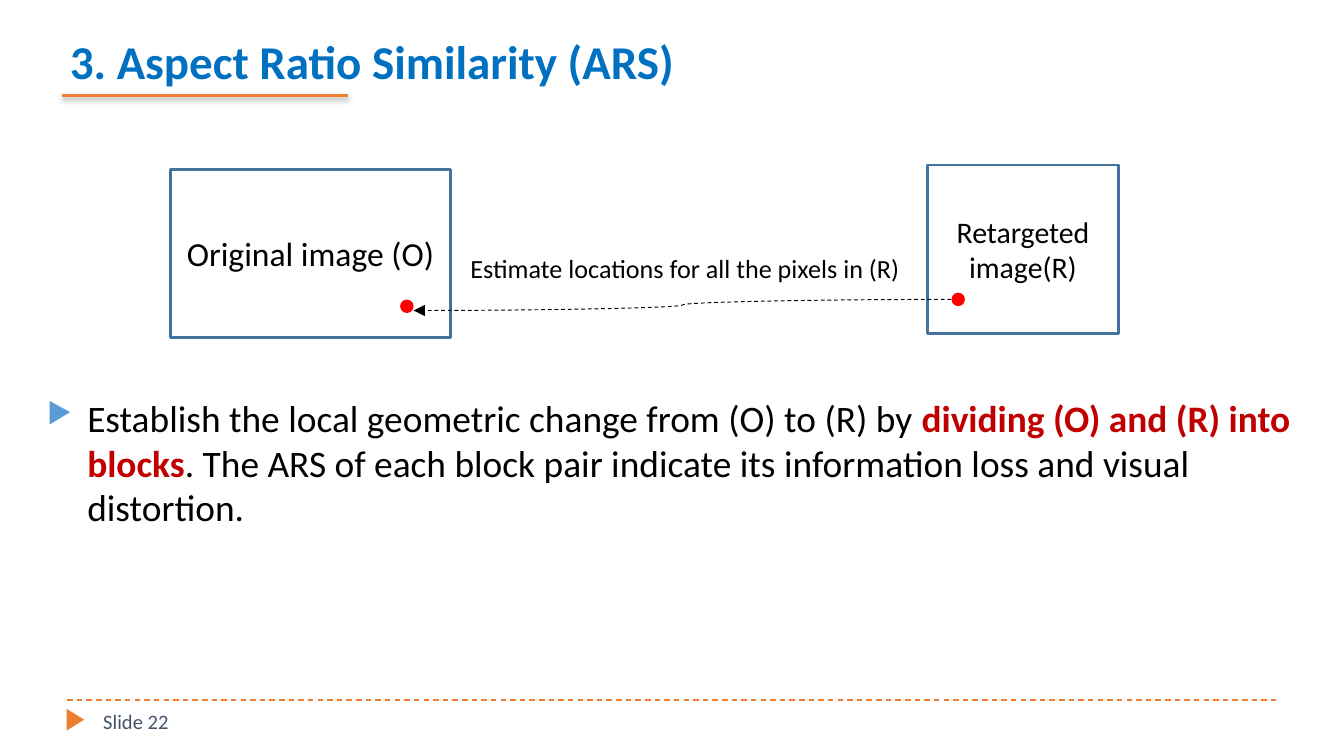
from lxml.etree import SubElement
from pptx import Presentation
from pptx.dml.color import RGBColor
from pptx.enum.dml import MSO_LINE_DASH_STYLE as Dash
from pptx.enum.shapes import MSO_CONNECTOR as Connector, MSO_SHAPE as Shape
from pptx.enum.text import MSO_ANCHOR as Anchor, PP_ALIGN as Align
from pptx.oxml.ns import qn
from pptx.util import Cm, Pt

WHITE = RGBColor(0xFF, 0xFF, 0xFF)
BLACK = RGBColor(0x00, 0x00, 0x00)
ORANGE = RGBColor(0xED, 0x7D, 0x31)
TITLE_BLUE = RGBColor(0x00, 0x70, 0xC0)
BORDER_BLUE = RGBColor(0x43, 0x73, 0x9E)
BULLET_BLUE = RGBColor(0x5B, 0x9B, 0xD5)
SLATE = RGBColor(0x44, 0x54, 0x6A)
DARK_RED = RGBColor(0xC0, 0x00, 0x00)
RED = RGBColor(0xFF, 0x00, 0x00)


def add_xml(parent, tag, **attributes):
    return SubElement(parent, qn(tag), {key: str(value) for key, value in attributes.items()})


class SlideBuilder:
    font_name = "Calibri"

    def __init__(self, slide):
        self.slide = slide

    def add_run(self, paragraph, text, size, color=BLACK, bold=False):
        run = paragraph.add_run()
        run.text = text
        run.font.color.rgb = color
        formats = {"name": self.font_name, "size": Pt(size), "bold": bold}
        for name, value in formats.items():
            setattr(run.font, name, value)

    def text(self, box, runs, size, wrap=True, anchor=Anchor.TOP):
        """Add a text box of (text, format) runs and return its paragraph."""
        frame = self.slide.shapes.add_textbox(*map(Cm, box)).text_frame
        frame.word_wrap = wrap
        frame.vertical_anchor = anchor
        paragraph = frame.paragraphs[0]
        for text, formats in runs:
            self.add_run(paragraph, text, size, **formats)
        return paragraph

    def bullet(self, box, runs, size):
        paragraph = self.text(box, runs, size)
        paragraph.space_before = Pt(6)
        properties = paragraph._p.get_or_add_pPr()
        for name, value in {"marL": Cm(0.76), "indent": -Cm(0.76)}.items():
            properties.set(name, str(value))
        add_xml(add_xml(properties, "a:buClr"), "a:srgbClr", val=BULLET_BLUE)
        add_xml(properties, "a:buSzPct", val=76000)
        add_xml(properties, "a:buChar", char="▶")

    def shape(self, kind, box, fill, border=None, rotation=0):
        shape = self.slide.shapes.add_shape(kind, *map(Cm, box))
        shape.shadow.inherit = False
        shape.rotation = rotation
        shape.fill.solid()
        shape.fill.fore_color.rgb = fill
        if border is None:
            shape.line.fill.background()
        else:
            shape.line.color.rgb = border
            shape.line.width = Pt(1.5)
        return shape

    def image_box(self, box, label, size):
        frame = self.shape(Shape.RECTANGLE, box, WHITE, BORDER_BLUE).text_frame
        frame.word_wrap = True
        frame.vertical_anchor = Anchor.MIDDLE
        paragraph = frame.paragraphs[0]
        paragraph.alignment = Align.CENTER
        self.add_run(paragraph, label, size)

    def pixel(self, left, top):
        self.shape(Shape.OVAL, (left, top, 0.2, 0.2), RED, RED)

    def line(self, start, end, color, width, kind=Connector.STRAIGHT,
             dash=None, arrow=False, shadow=False):
        connector = self.slide.shapes.add_connector(kind, *map(Cm, start + end))
        line = connector.line
        line.color.rgb = color
        for name, value in {"width": Pt(width), "dash_style": dash}.items():
            setattr(line, name, value)
        properties = connector._element.spPr
        if arrow:
            add_xml(properties.find(qn("a:ln")), "a:tailEnd", type="triangle")
        effects = add_xml(properties, "a:effectLst")
        if shadow:
            outer = add_xml(effects, "a:outerShdw", blurRad=Pt(3), dist=Pt(2),
                            dir=5400000, rotWithShape=0)
            tint = add_xml(outer, "a:srgbClr", val=BLACK)
            add_xml(tint, "a:alpha", val=40000)


def main():
    presentation = Presentation()
    presentation.slide_width = Cm(25.4)
    presentation.slide_height = Cm(14.29)
    builder = SlideBuilder(presentation.slides.add_slide(presentation.slide_layouts[6]))

    # Footer and title
    builder.line((1.27, 13.23), (24.13, 13.23), ORANGE, 0.75, dash=Dash.DASH)
    builder.shape(Shape.ISOSCELES_TRIANGLE, (1.22, 13.44, 0.41, 0.33), ORANGE, rotation=90)
    builder.line((1.17, 1.8), (6.58, 1.8), ORANGE, 1.5, shadow=True)
    builder.text((1.07, 0.58, 23.06, 1.22),
                 [("3. Aspect Ratio Similarity (ARS)", {"color": TITLE_BLUE, "bold": True})],
                 25.2, anchor=Anchor.BOTTOM)
    builder.text((1.7, 13.28, 5.51, 0.76), [("Slide 22", {"color": SLATE})], 11)

    builder.bullet((0.64, 7.34, 24.56, 4.01), [
        ("Establish the local geometric change from (O) to (R) by ", {}),
        ("dividing (O) and (R) into blocks", {"color": DARK_RED, "bold": True}),
        (". The ARS of each block pair indicate its information loss and visual distortion.", {}),
    ], 20)

    # Pixel mapping from the retargeted image back to the original image
    builder.image_box((3.23, 3.2, 5.28, 3.18), "Original image (O)", 18)
    builder.image_box((17.53, 3.12, 3.61, 3.18), "Retargeted image(R)", 16)
    builder.line((17.98, 5.66), (7.82, 5.87), BLACK, 0.5, kind=Connector.CURVE,
                 dash=Dash.DASH, arrow=True)
    builder.text((8.64, 4.65, 8.99, 0.86),
                 [("Estimate locations for all the pixels in (R)", {})], 14, wrap=False)
    builder.pixel(18.01, 5.56)
    builder.pixel(7.59, 5.69)

    presentation.save("out.pptx")


if __name__ == "__main__":
    main()
